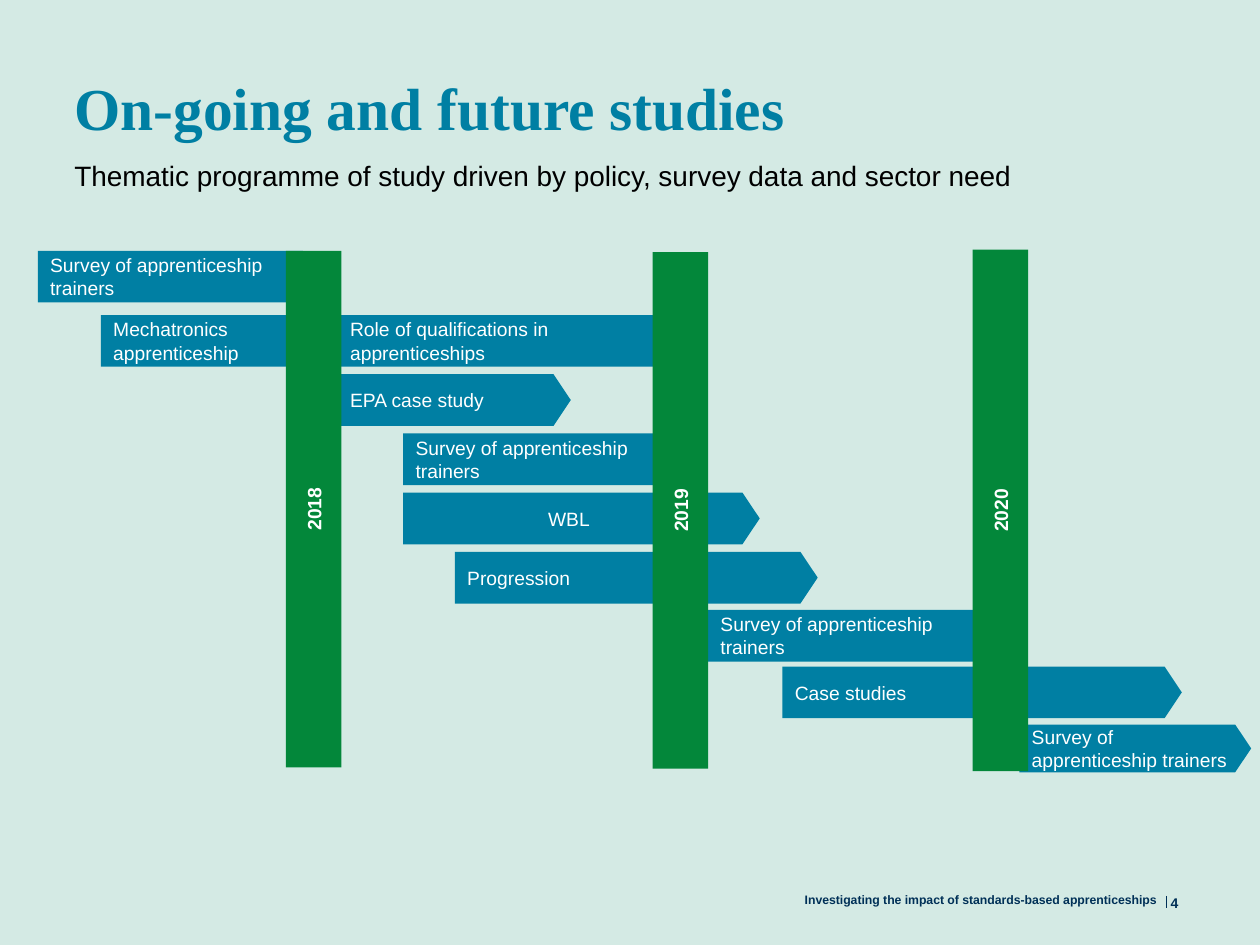
import pptx
import pptx.dml.color
import pptx.enum.shapes
import pptx.enum.text
import pptx.oxml
import pptx.util
from pptx.util import Inches

COLOURS = {
    "background": "D4EAE4",
    "teal": "007FA3",
    "green": "03873A",
    "navy": "003057",
    "black": "000000",
    "white": "FFFFFF",
}
SHAPES = pptx.enum.shapes.MSO_SHAPE
ALIGN = pptx.enum.text.PP_ALIGN
ANCHOR = pptx.enum.text.MSO_ANCHOR


def colour(name):
    return pptx.dml.color.RGBColor.from_string(COLOURS[name])


def write(box, text, size=11, font="Arial", ink="white", bold=False,
          align=ALIGN.LEFT, anchor=ANCHOR.MIDDLE, spacing=None,
          margins=(0.1, 0.05, 0.1, 0.05)):
    """Fill a shape with one formatted paragraph; margins run left, top, right, bottom."""
    frame = box.text_frame
    frame.word_wrap = True
    frame.vertical_anchor = anchor
    (frame.margin_left, frame.margin_top,
     frame.margin_right, frame.margin_bottom) = map(Inches, margins)
    para = frame.paragraphs[0]
    para.alignment = align
    para.line_spacing = spacing
    span = para.add_run()
    span.text = text
    span.font.size = pptx.util.Pt(size)
    span.font.name = font
    span.font.bold = bold
    span.font.color.rgb = colour(ink)


deck = pptx.Presentation()
deck.slide_width, deck.slide_height = Inches(10), Inches(7.5)
page = deck.slides.add_slide(deck.slide_layouts[6])
page.background.fill.solid()
page.background.fill.fore_color.rgb = colour("background")

# Heading and footer texts
labels = [
    ((0.59, 0.46, 8.41, 1.22), "On-going and future studies",
     dict(size=34, font="Times New Roman", ink="teal", bold=True,
          anchor=ANCHOR.TOP, spacing=1.18)),
    ((0.59, 1.21, 8.15, 0.71),
     "Thematic programme of study driven by policy, survey data and sector need",
     dict(size=16, ink="black", anchor=ANCHOR.TOP, spacing=1.19)),
    ((9.29, 7.1, 0.47, 0.14), "4", dict(size=8, ink="navy", bold=True)),
    ((6.21, 7.1, 2.97, 0.1), "Investigating the impact of standards-based apprenticeships",
     dict(size=7, ink="navy", bold=True, align=ALIGN.RIGHT, anchor=ANCHOR.BOTTOM)),
]
for place, text, style in labels:
    box = page.shapes.add_textbox(*map(Inches, place))
    write(box, text, margins=(0, 0, 0, 0), **style)

divider = page.shapes.add_connector(
    pptx.enum.shapes.MSO_CONNECTOR.STRAIGHT,
    Inches(9.26), Inches(7.11), Inches(9.26), Inches(7.21))
divider.line.color.rgb = colour("navy")
divider.line.width = pptx.util.Pt(0.75)
divider._element.spPr.append(pptx.oxml.parse_xml(
    '<a:effectLst xmlns:a="http://schemas.openxmlformats.org/drawingml/2006/main"/>'))

# Studies: left, top, width, height, name, left text margin
survey = "Survey of apprenticeship trainers"
studies = [
    (0.3, 1.99, 2.24, 0.41, survey, 0.1),
    (0.8, 2.5, 1.85, 0.41, "Mechatronics apprenticeship", 0.1),
    (2.68, 2.5, 2.78, 0.41, "Role of qualifications in apprenticeships", 0.1),
    (2.68, 2.97, 1.85, 0.41, "EPA case study", 0.1),
    (3.2, 3.44, 2.24, 0.41, survey, 0.1),
    (3.2, 3.91, 2.83, 0.41, "WBL", 1.15),
    (3.61, 4.38, 2.88, 0.41, "Progression", 0.1),
    (5.62, 4.84, 2.24, 0.41, survey, 0.1),
    (6.21, 5.29, 3.17, 0.41, "Case studies", 0.1),
    (8.09, 5.75, 1.84, 0.38, survey, 0.1),
]
for left, top, width, height, name, indent in studies:
    arrow = page.shapes.add_shape(
        SHAPES.PENTAGON, Inches(left), Inches(top), Inches(width), Inches(height))
    arrow.adjustments[0] = 0.334
    arrow.shadow.inherit = False
    arrow.fill.solid()
    arrow.fill.fore_color.rgb = colour("teal")
    arrow.line.fill.background()
    write(arrow, name, margins=(indent, 0.05, 0.1, 0.05))

# Year bars lie flat and are turned about their centre to read upwards
bar_width = 0.44
for year, centre_x, centre_y, length in [
        ("2018", 2.49, 4.04, 4.1), ("2019", 5.4, 4.05, 4.1), ("2020", 7.94, 4.05, 4.14)]:
    bar = page.shapes.add_shape(
        SHAPES.RECTANGLE, Inches(centre_x - length / 2), Inches(centre_y - bar_width / 2),
        Inches(length), Inches(bar_width))
    bar.rotation = 270
    bar.shadow.inherit = False
    bar.fill.solid()
    bar.fill.fore_color.rgb = colour("green")
    bar.line.fill.background()
    write(bar, year, bold=True, align=ALIGN.CENTER)

deck.save("out.pptx")
